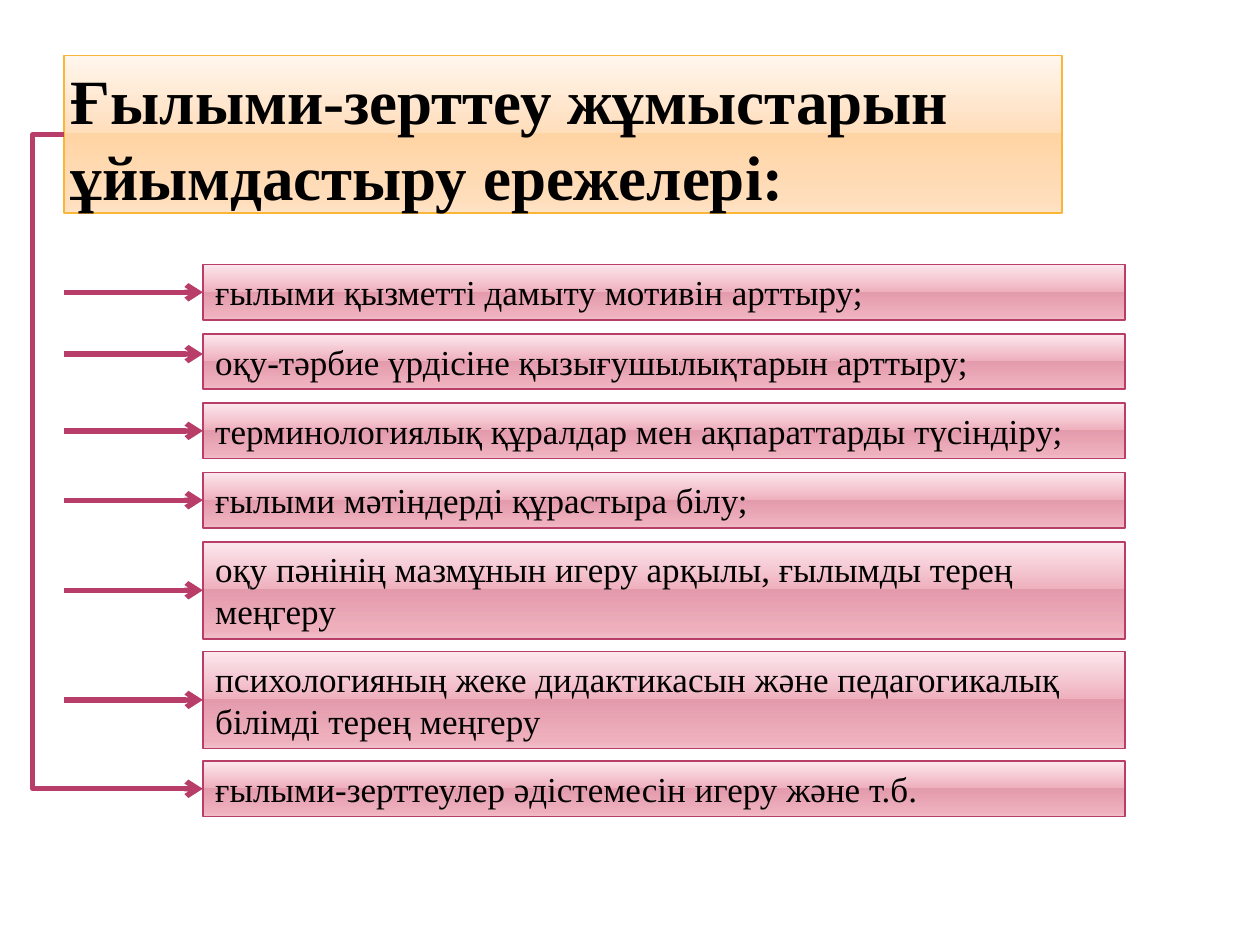
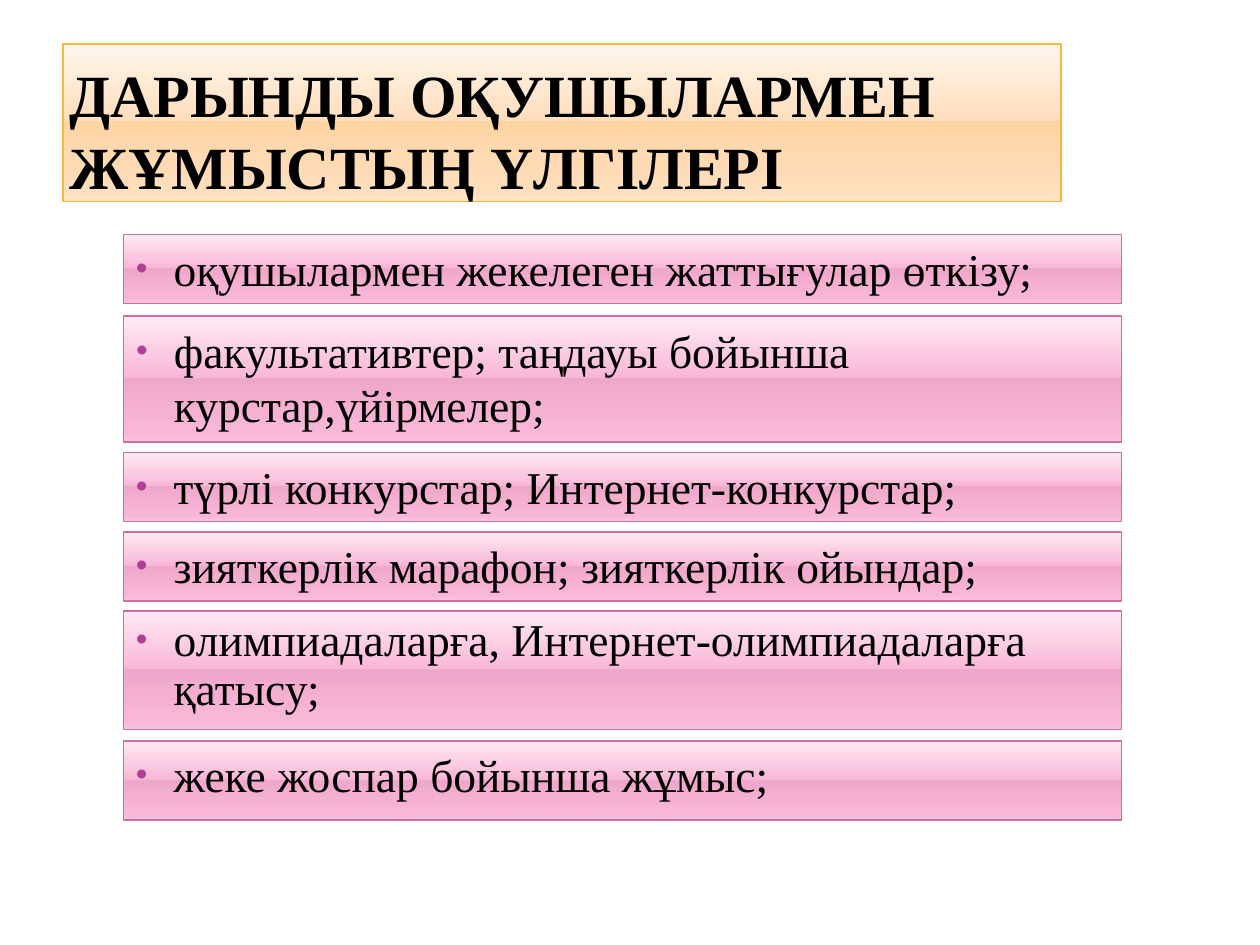
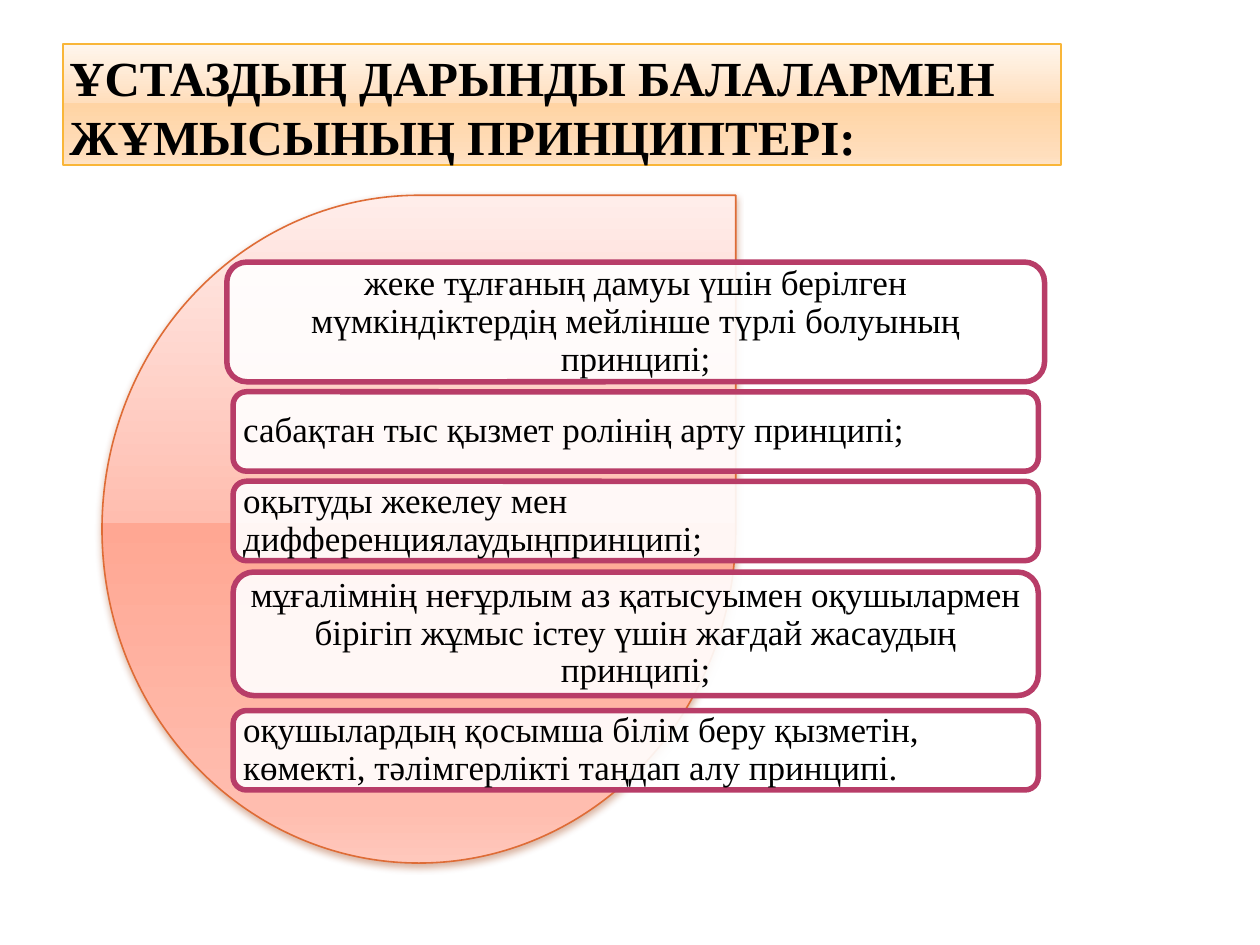
from lxml import etree
from pptx import Presentation
from pptx.dml.color import RGBColor
from pptx.enum.shapes import MSO_CONNECTOR, MSO_SHAPE
from pptx.enum.text import MSO_ANCHOR, MSO_AUTO_SIZE, PP_ALIGN
from pptx.oxml.ns import qn
from pptx.util import Inches, Pt

RECT, ROUND, DROP = MSO_SHAPE.RECTANGLE, MSO_SHAPE.ROUNDED_RECTANGLE, MSO_SHAPE.TEAR
STRAIGHT, ELBOW = MSO_CONNECTOR.STRAIGHT, MSO_CONNECTOR.ELBOW
TOP, MIDDLE, BOTTOM = MSO_ANCHOR.TOP, MSO_ANCHOR.MIDDLE, MSO_ANCHOR.BOTTOM
LEFT, CENTER = PP_ALIGN.LEFT, PP_ALIGN.CENTER
FONT = "Times New Roman"
ROSE, BULLET, SHADE = "B83D68", "B13F9A", "9C3707"

# Gradient colours at the shared stops, then the line colour
STOPS = (0, 49, 49, 92, 100)
GOLD = (("FFF6ED", "FFDEBC", "FFD4A4", "FFDEBC", "FFE3C7"), "F9B639")
RED = (("FCE8ED", "EFB0BE", "E39BAC", "EFB0BE", "F0BEC9"), ROSE)
PINK = (("FFEAF4", "F9B7D7", "EFA7CB", "F9B7D7", "F8C4DD"), "CF6DA4")
CORAL = (("FFEDEA", "FFBDAF", "FFA793", "FFBDAF", "FFC8BC"), "DE6C36")

# Content: rules as (text, line count)
RULES = [
    ("ғылыми қызметті дамыту мотивін арттыру;", 1),
    ("оқу-тәрбие үрдісіне қызығушылықтарын арттыру;", 1),
    ("терминологиялық құралдар мен ақпараттарды түсіндіру;", 1),
    ("ғылыми мәтіндерді құрастыра білу;", 1),
    ("оқу пәнінің мазмұнын игеру арқылы, ғылымды терең меңгеру", 2),
    ("психологияның жеке дидактикасын және педагогикалық білімді терең меңгеру", 2),
    ("ғылыми-зерттеулер әдістемесін игеру және т.б.", 1),
]
# Forms as (text, top, height, line spacing)
FORMS = [
    ("оқушылармен жекелеген жаттығулар өткізу;", 1.86, 0.55, 1),
    ("факультативтер; таңдауы бойынша курстар,үйірмелер;", 2.51, 1, 1),
    ("түрлі конкурстар; Интернет-конкурстар;", 3.59, 0.55, 1),
    ("зияткерлік марафон; зияткерлік ойындар;", 4.22, 0.55, 1),
    ("олимпиадаларға, Интернет-олимпиадаларға қатысу;", 4.85, 0.94, 0.9),
    ("жеке жоспар бойынша жұмыс;", 5.88, 0.63, 1),
]
# Principles as (text, left, top, width, height, alignment)
IDEAS = [
    ("жеке тұлғаның дамуы үшін берілген мүмкіндіктердің мейлінше түрлі болуының принципі;",
     1.8, 2.08, 6.49, 0.95, CENTER),
    ("сабақтан тыс қызмет ролінің арту принципі;", 1.85, 3.11, 6.39, 0.63, LEFT),
    ("оқытуды жекелеу мен дифференциялаудыңпринципі;", 1.85, 3.82, 6.39, 0.63, LEFT),
    ("мұғалімнің неғұрлым аз қатысуымен оқушылармен бірігіп жұмыс істеу үшін "
     "жағдай жасаудың принципі;", 1.85, 4.54, 6.39, 0.98, CENTER),
    ("оқушылардың қосымша білім беру қызметін, көмекті, тәлімгерлікті таңдап алу принципі.",
     1.85, 5.64, 6.39, 0.63, LEFT),
]


def rgb(code):
    return RGBColor.from_string(code)


def node(parent, tag, **attrs):
    child = etree.SubElement(parent, qn("a:" + tag))
    for key, value in attrs.items():
        child.set(key, str(value))
    return child


def place(shape, left, top, width, height):
    shape.left, shape.top = Inches(left), Inches(top)
    shape.width, shape.height = Inches(width), Inches(height)


def paint(shape, theme):
    """Give a shape the vertical gradient and thin line of a theme."""
    tints, edge = theme
    shape.fill.gradient()
    grad = shape.element.spPr.find(qn("a:gradFill"))
    for old in list(grad):
        grad.remove(old)
    stops = node(grad, "gsLst")
    for pos, tint in zip(STOPS, tints):
        node(node(stops, "gs", pos=pos * 1000), "srgbClr", val=tint)
    node(grad, "lin", ang=5400000, scaled=0)
    shape.line.color.rgb = rgb(edge)
    shape.line.width = Pt(0.9)


def write(shape, text, size, bold=False, align=LEFT, anchor=TOP,
          pad=(0.1, 0.05), space=1, bullet=False):
    frame = shape.text_frame
    frame.word_wrap = True
    frame.auto_size = MSO_AUTO_SIZE.NONE
    frame.vertical_anchor = anchor
    frame.margin_left = frame.margin_right = Inches(pad[0])
    frame.margin_top = frame.margin_bottom = Inches(pad[1])
    para = frame.paragraphs[0]
    para.alignment, para.line_spacing = align, space
    para.space_before = Pt(0)
    if bullet:
        props = para._p.get_or_add_pPr()
        props.set("marL", str(Inches(0.3)))
        props.set("indent", str(-Inches(0.3)))
        node(node(props, "buClr"), "srgbClr", val=BULLET)
        node(props, "buSzPct", val=73000)
        node(props, "buFont", typeface="Arial")
        node(props, "buChar", char="•")
    run = para.add_run()
    run.text = text
    font = run.font
    font.name, font.size, font.bold = FONT, Pt(size), bold
    font.color.rgb = rgb("000000")


def add_box(slide, kind, *place_at):
    box = slide.shapes.add_shape(kind, *map(Inches, place_at))
    box.shadow.inherit = False
    return box


def add_arrow(slide, kind, *ends):
    arrow = slide.shapes.add_connector(kind, *map(Inches, ends))
    arrow.line.color.rgb = rgb(ROSE)
    arrow.line.width = Pt(3)
    node(arrow.line._get_or_add_ln(), "tailEnd", type="arrow")
    node(arrow.element.spPr, "effectLst")
    return arrow


def add_slide(deck, layout, text, size, left=0.5, top=0.35, height=1.25):
    slide = deck.slides.add_slide(deck.slide_layouts[layout])
    title = slide.shapes.title
    place(title, left, top, 7.92, height)
    paint(title, GOLD)
    write(title, text, size, bold=True, anchor=BOTTOM, pad=(0.05, 0))
    return slide


def draw_rules(deck):
    slide = add_slide(deck, 5, "Ғылыми-зерттеу жұмыстарын ұйымдастыру ережелері:",
                      36, left=0.51, top=0.44)
    start, left, top = 0.51, 1.61, 2.1
    heights, steps = {1: 0.44, 2: 0.77}, {1: 0.55, 2: 0.87}
    nudge = {1: -0.06}
    for i, (text, lines) in enumerate(RULES):
        row = add_box(slide, RECT, left, top, 7.32, heights[lines])
        paint(row, RED)
        write(row, text, 20)
        mid = top + heights[lines] / 2 + nudge.get(i, 0)
        if i < len(RULES) - 1:
            add_arrow(slide, STRAIGHT, start, mid, left, mid)
        top += steps[lines]
    # Bracket from the title to the last rule
    bend = add_arrow(slide, ELBOW, start, 1.07, left, mid)
    guides = bend.element.spPr.find(qn("a:prstGeom")).find(qn("a:avLst"))
    node(guides, "gd", name="adj1", fmla="val -22700")


def draw_forms(deck):
    slide = add_slide(deck, 1, "ДАРЫНДЫ ОҚУШЫЛАРМЕН ЖҰМЫСТЫҢ ҮЛГІЛЕРІ", 34.2)
    for i, (text, top, height, space) in enumerate(FORMS):
        spot = (0.98, top, 7.92, height)
        if i == 1:
            row = slide.placeholders[1]
            place(row, *spot)
        else:
            row = add_box(slide, RECT, *spot)
        paint(row, PINK)
        write(row, text, 26, space=space, bullet=True)


def draw_ideas(deck):
    slide = add_slide(deck, 5, "ҰСТАЗДЫҢ ДАРЫНДЫ БАЛАЛАРМЕН ЖҰМЫСЫНЫҢ ПРИНЦИПТЕРІ:",
                      28, height=0.96)
    # Teardrop with a soft shadow
    drop = add_box(slide, DROP, 0.81, 1.55, 5.03, 5.3)
    paint(drop, CORAL)
    glow = node(drop.element.spPr.find(qn("a:effectLst")), "outerShdw",
                blurRad=Pt(4), dist=Pt(2), dir=5400000, rotWithShape=0)
    node(node(glow, "srgbClr", val=SHADE), "alpha", val=38000)
    # Principle cards
    for text, left, top, width, height, align in IDEAS:
        card = add_box(slide, ROUND, left, top, width, height)
        card.fill.solid()
        card.fill.fore_color.rgb = rgb("FFFFFF")
        tint = card.element.spPr.find(qn("a:solidFill"))[0]
        node(tint, "alpha", val=90000)
        card.line.color.rgb = rgb(ROSE)
        card.line.width = Pt(3.15)
        # Rounded corners already inset the text by 5% of the height
        pad = 0.08 - 0.05 * height
        write(card, text, 20, align=align, anchor=MIDDLE, pad=(pad, pad), space=0.9)


def main():
    deck = Presentation()
    deck.slide_width, deck.slide_height = Inches(10), Inches(7.5)
    draw_rules(deck)
    draw_forms(deck)
    draw_ideas(deck)
    deck.save("out.pptx")


if __name__ == "__main__":
    main()
